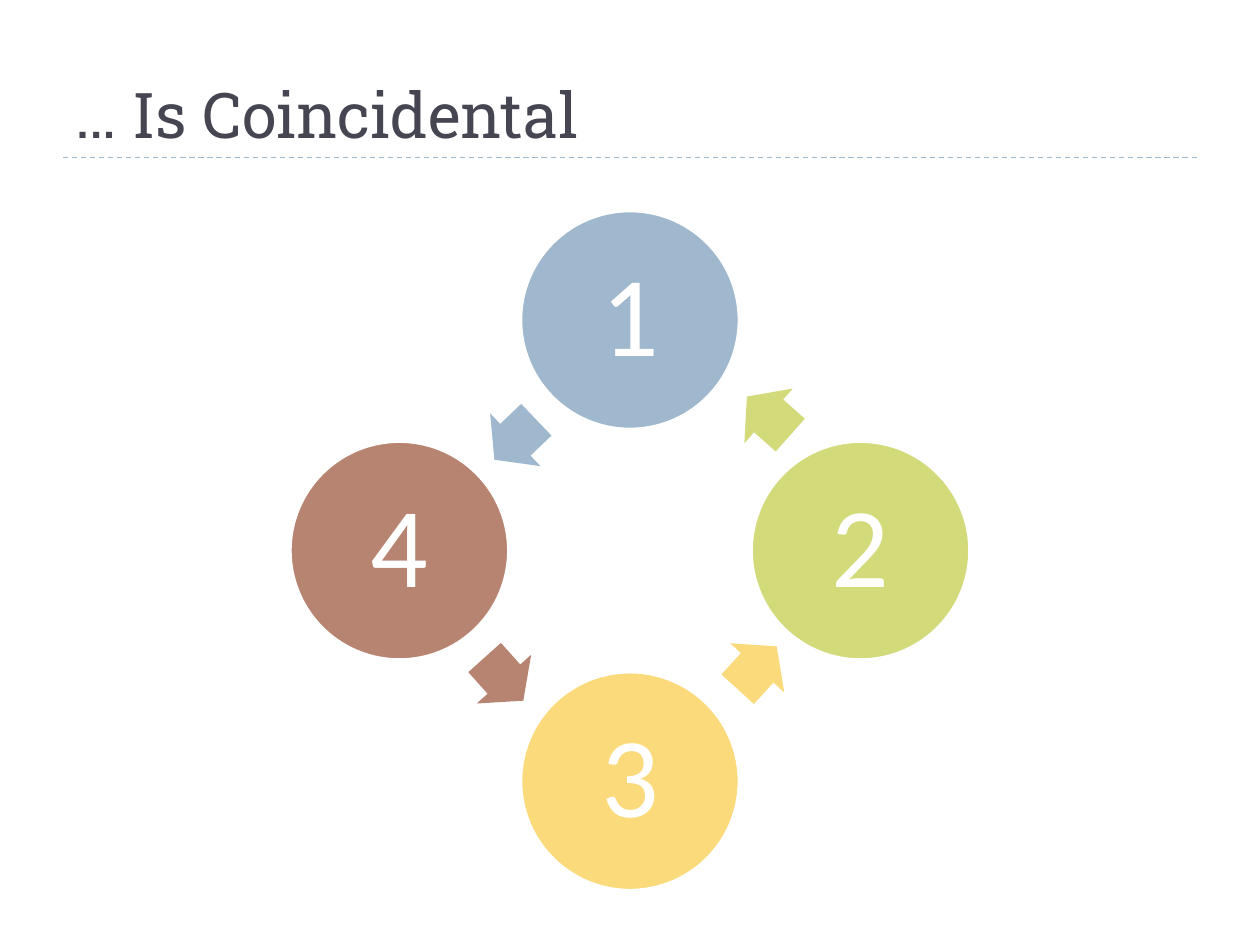
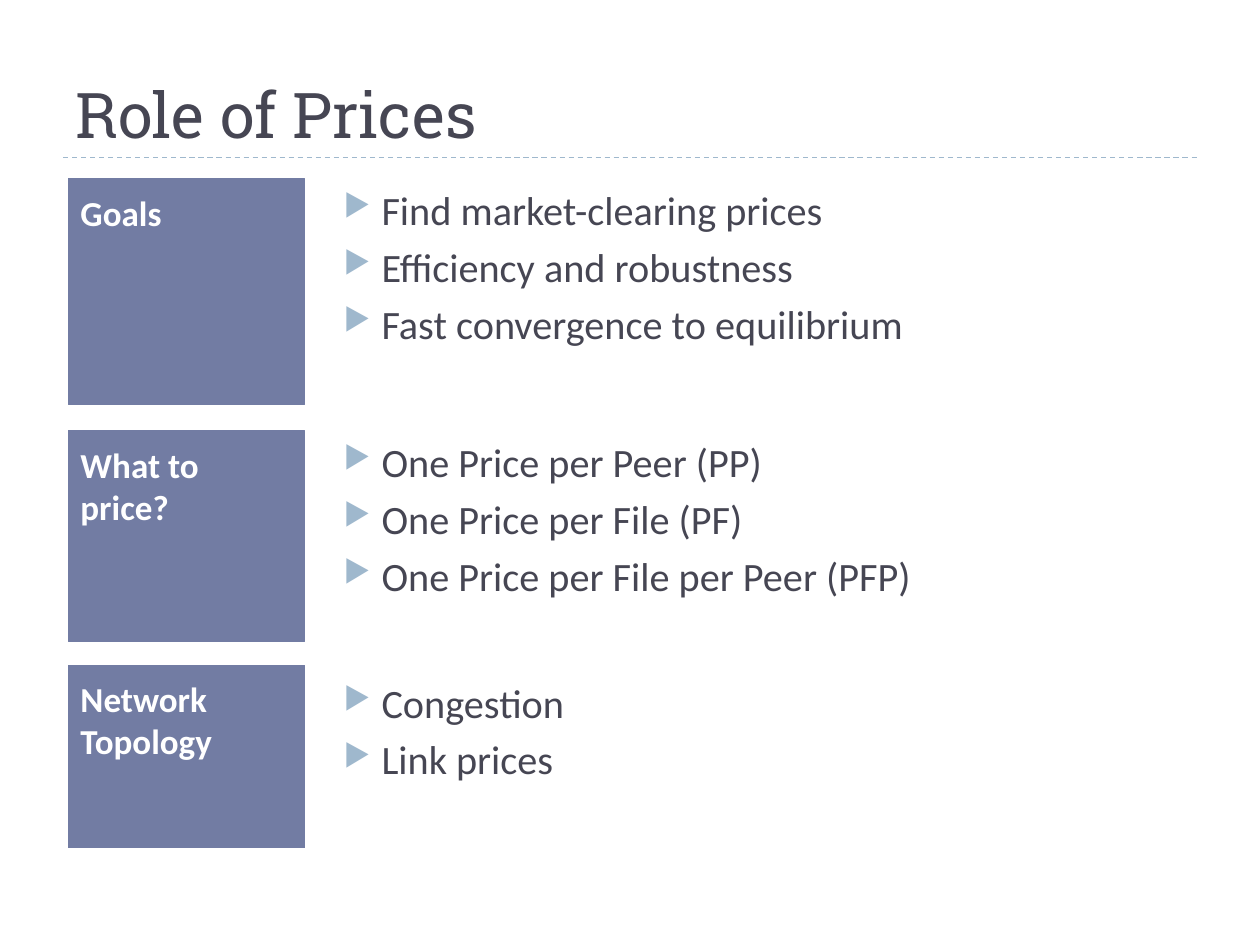
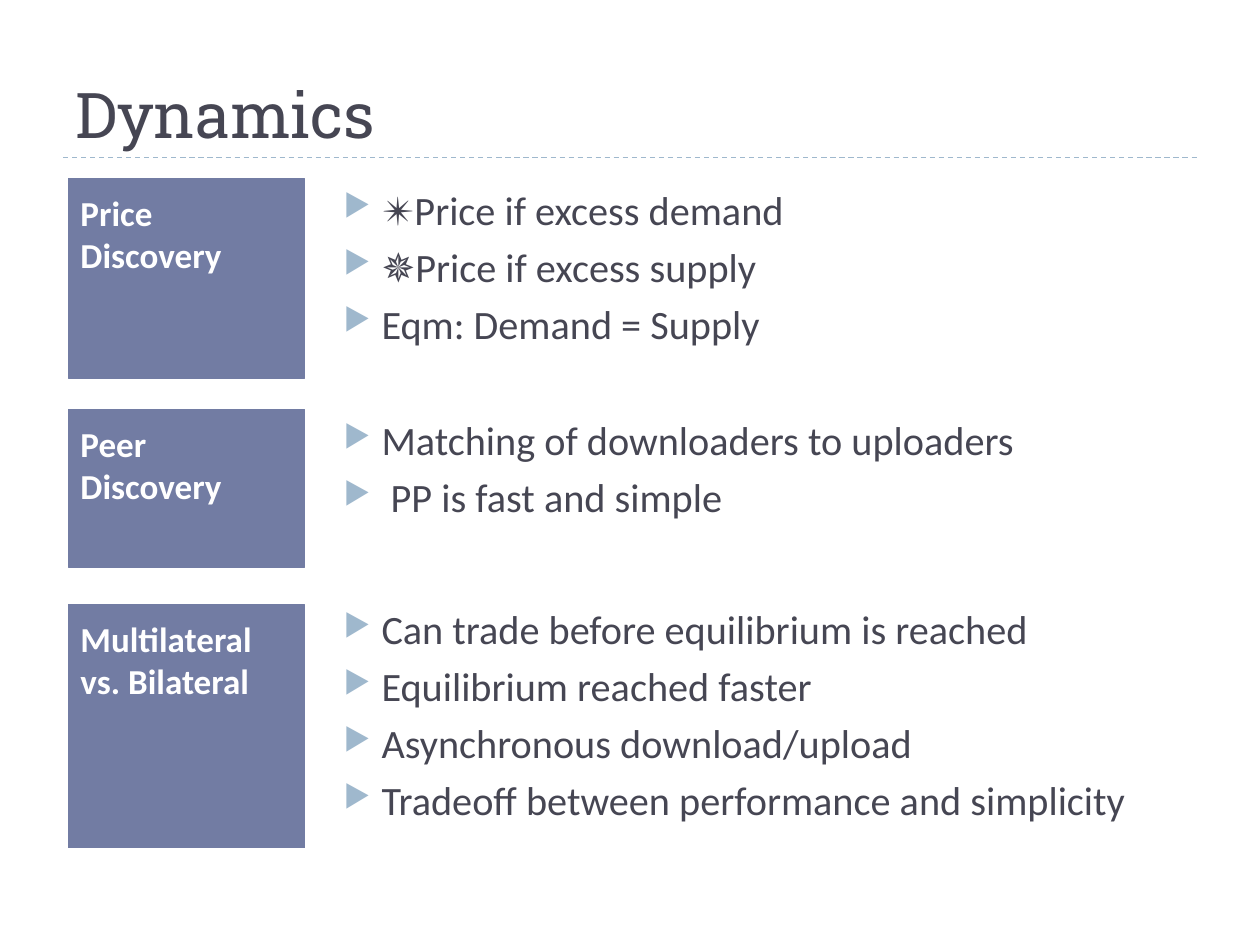
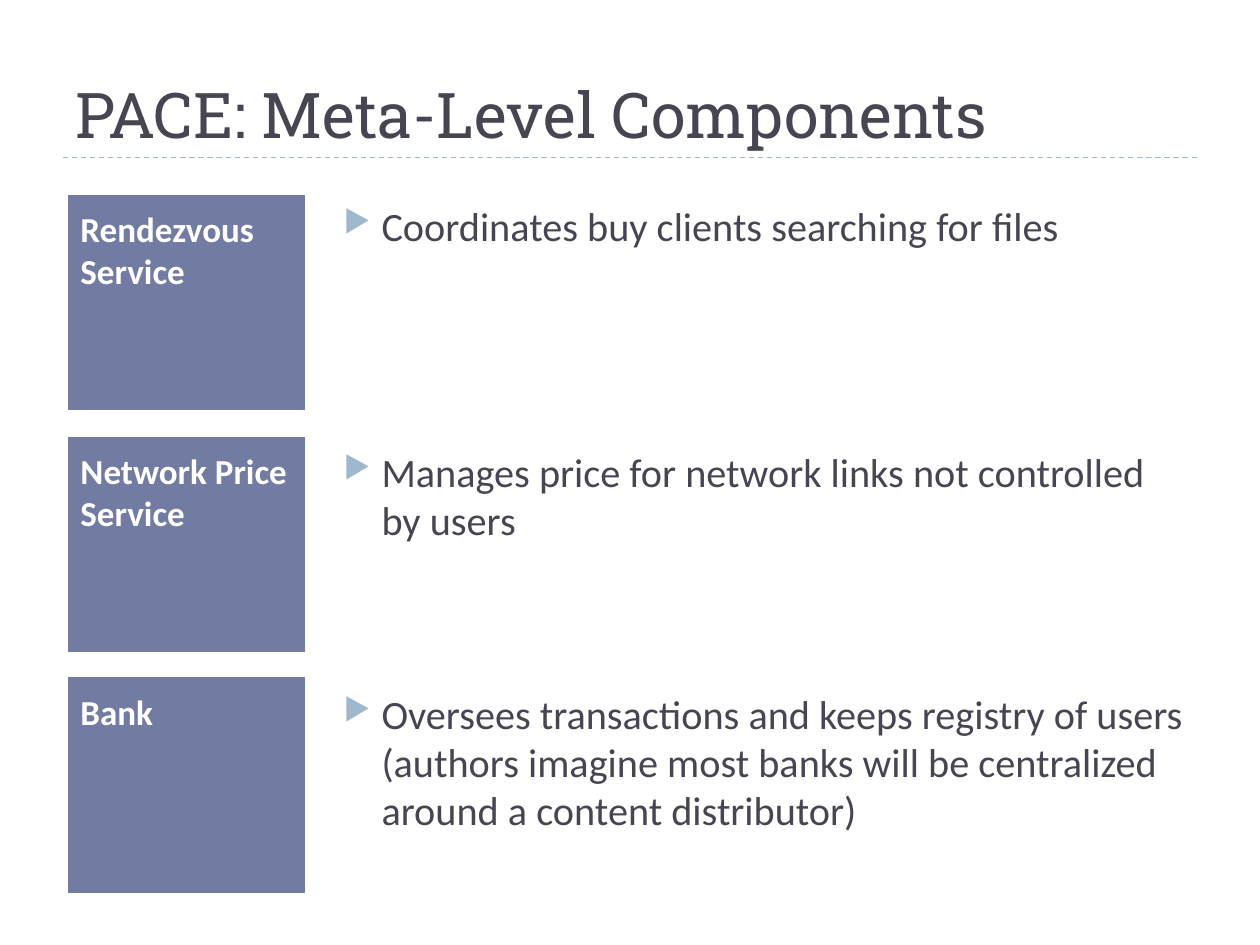
from math import cos, pi, sin

from lxml import etree
from pptx import Presentation
from pptx.dml.color import RGBColor
from pptx.enum.dml import MSO_LINE
from pptx.enum.shapes import MSO_CONNECTOR, MSO_SHAPE
from pptx.enum.text import MSO_ANCHOR, MSO_AUTO_SIZE, PP_ALIGN
from pptx.oxml.ns import qn
from pptx.util import Inches, Pt

DASH = MSO_LINE.DASH
STRAIGHT = MSO_CONNECTOR.STRAIGHT
ELLIPSE, ARROW, RECTANGLE = MSO_SHAPE.OVAL, MSO_SHAPE.RIGHT_ARROW, MSO_SHAPE.RECTANGLE
TOP, MIDDLE, BOTTOM = MSO_ANCHOR.TOP, MSO_ANCHOR.MIDDLE, MSO_ANCHOR.BOTTOM
LEFT, CENTER = PP_ALIGN.LEFT, PP_ALIGN.CENTER
FIT_TEXT = MSO_AUTO_SIZE.SHAPE_TO_FIT_TEXT

INK, WHITE = "464653", "FFFFFF"
BLUE, LIME, YELLOW, BROWN, SLATE = "9FB8CD", "D2DA7A", "FADA7A", "B88472", "727CA3"
HEADING_FONT, BODY_FONT = "Roboto Slab", "Calibri"

CYCLE_X, CYCLE_Y, CYCLE_RADIUS, CIRCLE_SIZE = 5, 4.37, 1.83, 1.73
ARROW_WIDTH, ARROW_HEIGHT = 0.46, 0.58
CYCLE_STEPS = [
    ("1", BLUE, 3.86, 3.2, 136.3),
    ("2", LIME, 5.87, 3.01, 221.6),
    ("3", YELLOW, 5.78, 5.01, 312.3),
    ("4", BROWN, 3.77, 5.1, 48.1),
]

TOPIC_SLIDES = {
    "Role of Prices": [
        ("Goals", 1.42, 1.79, 1.42, 1.4,
         ["Find market-clearing prices", "Efficiency and robustness",
          "Fast convergence to equilibrium"]),
        ("What to price?", 3.42, 1.67, 3.42, 1.67,
         ["One Price per Peer (PP)", "One Price per File (PF)",
          "One Price per File per Peer (PFP)"]),
        ("Network Topology", 5.28, 1.45, 5.33, 1.75, ["Congestion", "Link prices"]),
    ],
    "Dynamics": [
        ("Price Discovery", 1.42, 1.58, 1.42, 1.4,
         ["✴Price if excess demand", "✵Price if excess supply", "Eqm: Demand = Supply"]),
        ("Peer Discovery", 3.25, 1.25, 3.25, 1.25,
         ["Matching of downloaders to uploaders", " PP is fast and simple"]),
        ("Multilateral vs. Bilateral", 4.8, 1.93, 4.75, 2.33,
         ["Can trade before equilibrium is reached", "Equilibrium reached faster",
          "Asynchronous download/upload", "Tradeoff between performance and simplicity"]),
    ],
    "PACE: Meta-Level Components": [
        ("Rendezvous Service", 1.55, 1.7, 1.55, 0.49,
         ["Coordinates buy clients searching for files"]),
        ("Network Price Service", 3.47, 1.7, 3.5, 1.58,
         ["Manages price for network links not controlled by users"]),
        ("Bank", 5.38, 1.7, 5.42, 1.92,
         ["Oversees transactions and keeps registry of users (authors imagine most "
          "banks will be centralized around a content distributor)"]),
    ],
}


def rgb(value):
    """Turn a hex string into a colour."""
    return RGBColor.from_string(value)


class Deck:
    """Hold the shared style and the current slide."""

    def __init__(self):
        """Start an empty 10 by 7.5 inch presentation."""
        self.presentation = Presentation()
        self.presentation.slide_width = Inches(10)
        self.presentation.slide_height = Inches(7.5)
        self.slide = None

    def new_slide(self, heading):
        """Add a slide with its heading and the dashed rule below it."""
        self.slide = self.presentation.slides.add_slide(self.presentation.slide_layouts[6])
        rule = self.slide.shapes.add_connector(
            STRAIGHT, Inches(0.5), Inches(1.25), Inches(9.5), Inches(1.25))
        rule.line.color.rgb = rgb(BLUE)
        rule.line.width = Pt(0.75)
        rule.line.dash_style = DASH
        etree.SubElement(rule._element.spPr, qn("a:effectLst"))
        frame = self.text_frame(0.5, 0.17, 9, 1.08)
        frame.vertical_anchor = BOTTOM
        self.add_text(frame.paragraphs[0], heading, 36, INK, HEADING_FONT)

    def text_frame(self, left, top, width, height):
        """Add a wrapping text box and return its text frame."""
        box = self.slide.shapes.add_textbox(
            Inches(left), Inches(top), Inches(width), Inches(height))
        box.text_frame.word_wrap = True
        return box.text_frame

    def add_text(self, paragraph, text, size, color, font=BODY_FONT, bold=False):
        """Add one styled run to a paragraph."""
        run = paragraph.add_run()
        run.text = text
        run.font.name = font
        run.font.size = Pt(size)
        run.font.bold = bold
        run.font.color.rgb = rgb(color)

    def shape(self, preset, left, top, width, height, fill, outline=None, weight=0):
        """Add a flat preset shape, outlined only if a colour is given."""
        shape = self.slide.shapes.add_shape(
            preset, Inches(left), Inches(top), Inches(width), Inches(height))
        shape.shadow.inherit = False
        shape.fill.solid()
        shape.fill.fore_color.rgb = rgb(fill)
        if outline:
            shape.line.color.rgb = rgb(outline)
            shape.line.width = Pt(weight)
        else:
            shape.line.fill.background()
        return shape

    def circle(self, number, center_x, center_y, color):
        """Add a numbered circle around a centre."""
        half = CIRCLE_SIZE / 2
        circle = self.shape(ELLIPSE, center_x - half, center_y - half,
                            CIRCLE_SIZE, CIRCLE_SIZE, color, WHITE, 1.5)
        circle.text_frame.vertical_anchor = MIDDLE
        paragraph = circle.text_frame.paragraphs[0]
        paragraph.alignment = CENTER
        paragraph.line_spacing = 0.9
        self.add_text(paragraph, number, 65, WHITE)

    def arrow(self, left, top, rotation, color):
        """Add a turned block arrow."""
        arrow = self.shape(ARROW, left, top, ARROW_WIDTH, ARROW_HEIGHT, color)
        arrow.adjustments[0] = 0.6
        arrow.adjustments[1] = 0.5
        arrow.rotation = rotation

    def topic(self, name, top, height):
        """Add a topic block in the left column."""
        block = self.shape(RECTANGLE, 0.54, top, 1.88, height, SLATE, SLATE, 0.5)
        frame = block.text_frame
        frame.word_wrap = True
        frame.vertical_anchor = TOP
        frame.margin_left = frame.margin_right = Inches(0.1)
        frame.margin_top = frame.margin_bottom = Inches(0.1)
        paragraph = frame.paragraphs[0]
        paragraph.alignment = LEFT
        paragraph.space_before = Pt(5)
        self.add_text(paragraph, name, 20, WHITE, bold=True)

    def points(self, top, width, height, points, fit):
        """Add the bulleted points beside a topic."""
        frame = self.text_frame(2.33, top, width, height)
        if fit:
            frame.auto_size = FIT_TEXT
        for index, point in enumerate(points):
            paragraph = frame.add_paragraph() if index else frame.paragraphs[0]
            paragraph.level = 1
            paragraph.space_before = Pt(5)
            self.bullet(paragraph)
            self.add_text(paragraph, point, 23, INK)

    def bullet(self, paragraph):
        """Give a paragraph a hanging triangle bullet."""
        properties = paragraph._p.get_or_add_pPr()
        properties.set("marL", str(Inches(0.6)))
        properties.set("indent", str(Inches(-0.3)))
        color = etree.SubElement(properties, qn("a:buClr"))
        etree.SubElement(color, qn("a:srgbClr"), val=BLUE)
        etree.SubElement(properties, qn("a:buSzPct"), val="76000")
        etree.SubElement(properties, qn("a:buChar"), char="▶")


def main():
    """Build the four slides and save them."""
    deck = Deck()
    deck.new_slide("… Is Coincidental")
    for index, (number, color, left, top, rotation) in enumerate(CYCLE_STEPS):
        angle = index * pi / 2
        deck.circle(number, CYCLE_X + CYCLE_RADIUS * sin(angle),
                    CYCLE_Y - CYCLE_RADIUS * cos(angle), color)
        deck.arrow(left, top, rotation, color)

    for heading, rows in TOPIC_SLIDES.items():
        deck.new_slide(heading)
        for index, (name, top, height, points_top, points_height, points) in enumerate(rows):
            first = index == 0
            deck.topic(name, top, height)
            deck.points(points_top, 6.83 if first else 7.17, points_height, points, first)

    deck.presentation.save("out.pptx")


if __name__ == "__main__":
    main()
